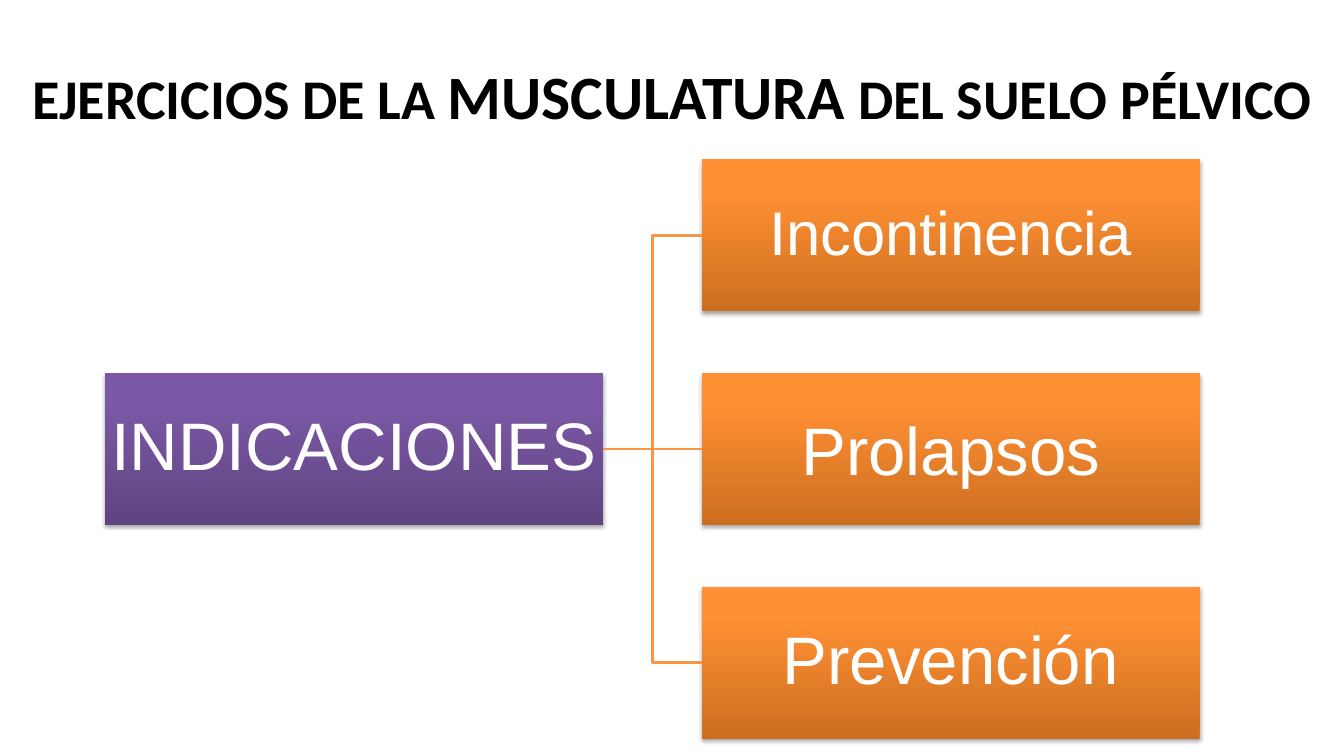
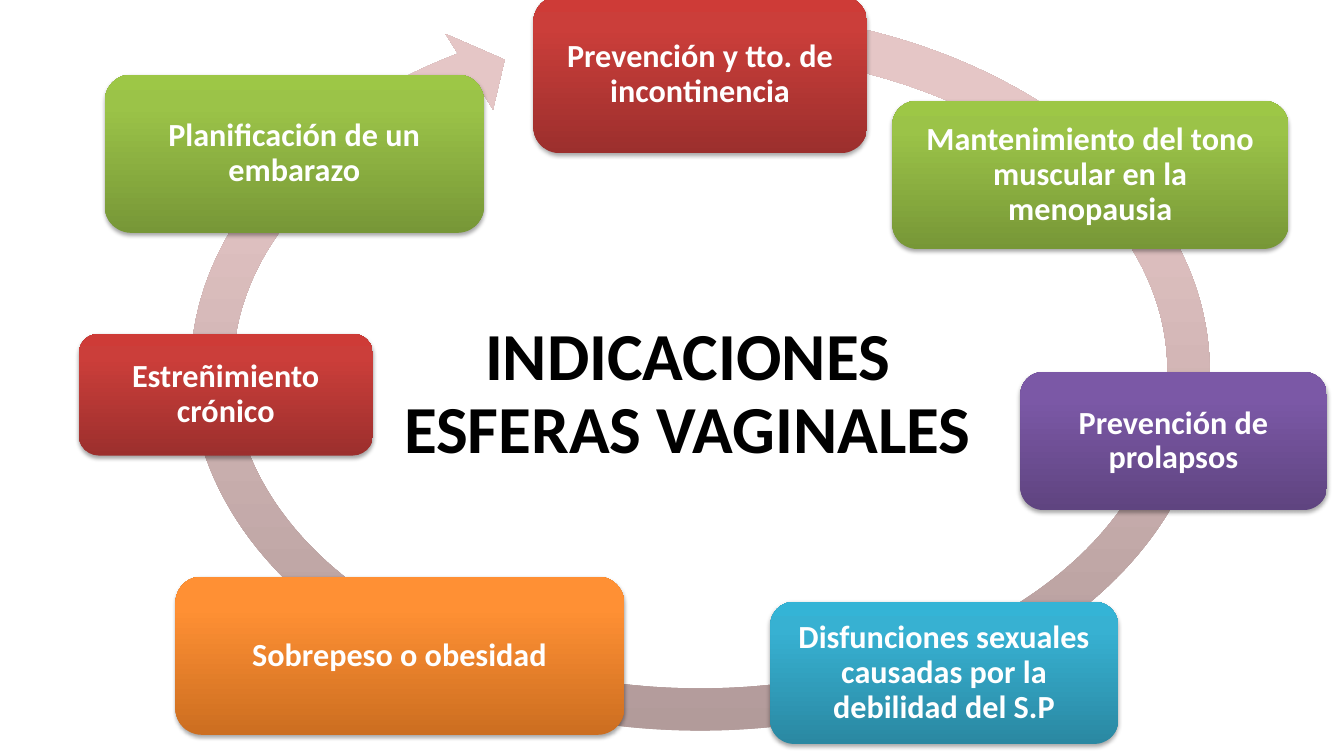
from copy import deepcopy

from lxml import etree
from pptx import Presentation
from pptx.dml.color import RGBColor
from pptx.enum import shapes, text
from pptx.oxml import ns
from pptx.util import Inches, Pt

TITLE_ONLY = 5
STOPS = (0, 0.8, 1)
PURPLE = ("5F4480", "7B58A6", "7C57A8")
ORANGE = ("CC6E20", "FF9034", "FF9136")
RED = ("9C2F2D", "CB3E3A", "CE3B37")
GREEN = ("779737", "9BC348", "9DC746")
BLUE = ("2A88A2", "37B1D2", "34B4D6")
PINK = ("B09998", "E5C6C6", "E6C7C6")
LINE, WHITE, BLACK = "F79646", "FFFFFF", "000000"

TITLE_FONT = {"name": "Calibri", "bold": True}
TREE_FONT = {"name": "Arial", "bold": False}
CYCLE_FONT = {"name": "Calibri", "bold": True}

TREE_SIZE = (4.94, 1.51)
ROOT_LEFT, BRANCH_LEFT = 1.04, 6.96
BRANCH_TOP, BRANCH_STEP = 1.58, 2.12
BRANCHES = [("Incontinencia", 44, 0.9), ("Prolapsos", 48, 1.0), ("Prevención", 48, 0.9)]

CYCLE = [
    ("Prevención y tto. de incontinencia", (5.29, -0.04, 3.31, 1.56), RED),
    ("Mantenimiento del tono muscular en la menopausia", (8.85, 1, 3.93, 1.47), GREEN),
    ("Prevención de prolapsos", (10.12, 3.69, 3.04, 1.37), PURPLE),
    ("Disfunciones sexuales causadas por la debilidad del S.P", (7.64, 5.97, 3.45, 1.41), BLUE),
    ("Sobrepeso o obesidad", (1.74, 5.72, 4.45, 1.57), ORANGE),
    ("Estreñimiento crónico", (0.78, 3.31, 2.92, 1.21), RED),
    ("Planificación de un embarazo", (1.04, 0.74, 3.76, 1.57), GREEN),
]


def rgb(code):
    return RGBColor.from_string(code)


def apply_format(target, values):
    for name, value in values.items():
        setattr(target, name, value)


def write_text(frame, spans, font, color, margin=0.1, spacing=0.9):
    """Write one centred paragraph from (text, size) spans."""
    apply_format(frame, {
        "word_wrap": True,
        "auto_size": text.MSO_AUTO_SIZE.NONE,
        "vertical_anchor": text.MSO_ANCHOR.MIDDLE,
        **{f"margin_{side}": Inches(margin) for side in ("left", "top", "right", "bottom")},
    })
    para = frame.paragraphs[0]
    apply_format(para, {"alignment": text.PP_ALIGN.CENTER, "line_spacing": spacing})
    for words, size in spans:
        span = para.add_run()
        span.text = words
        apply_format(span.font, {**font, "size": Pt(size)})
        span.font.color.rgb = rgb(color)


def add_titled_page(deck, spans, at):
    page = deck.slides.add_slide(deck.slide_layouts[TITLE_ONLY])
    title = page.shapes.title
    apply_format(title, dict(zip(("left", "top", "width", "height"), map(Inches, at))))
    write_text(title.text_frame, spans, TITLE_FONT, BLACK)
    return page


def add_gradient_shape(page, kind, at, colors):
    """Add an unlined shape shaded from the bottom up."""
    shape = page.shapes.add_shape(kind, *map(Inches, at))
    shape.shadow.inherit = False
    shape.line.fill.background()
    shape.fill.gradient()
    shape.fill.gradient_angle = 90
    stop_list = shape._element.spPr.find(".//" + ns.qn("a:gsLst"))
    stop_list.append(deepcopy(stop_list[0]))
    for stop, position, color in zip(shape.fill.gradient_stops, STOPS, colors):
        stop.position = position
        stop.color.rgb = rgb(color)
    return shape


def add_shadow(shape):
    effects = shape._element.spPr.find(ns.qn("a:effectLst"))
    shadow = etree.SubElement(effects, ns.qn("a:outerShdw"), blurRad=str(Pt(3.1)),
                              dist=str(Pt(1.8)), dir="5400000", rotWithShape="0")
    color = etree.SubElement(shadow, ns.qn("a:srgbClr"), val=BLACK)
    etree.SubElement(color, ns.qn("a:alpha"), val="35000")


def add_box(page, kind, at, colors, spans, font, **layout):
    box = add_gradient_shape(page, kind, at, colors)
    add_shadow(box)
    write_text(box.text_frame, spans, font, WHITE, **layout)
    return box


def join_boxes(page, root, branch):
    """Link the right side of root to the left side of branch."""
    level = root.top == branch.top
    kind = shapes.MSO_CONNECTOR.STRAIGHT if level else shapes.MSO_CONNECTOR.ELBOW
    link = page.shapes.add_connector(kind, 0, 0, 0, 0)
    link.begin_connect(root, 3)
    link.end_connect(branch, 1)
    link.line.width = Pt(2)
    link.line.color.rgb = rgb(LINE)
    etree.SubElement(link._element.spPr, ns.qn("a:effectLst"))


def build_tree(deck):
    page = add_titled_page(
        deck,
        [("EJERCICIOS DE LA ", 40), ("MUSCULATURA", 44), (" DEL SUELO PÉLVICO", 40)],
        (0, 0.4, 13.33, 1.18))
    kind = shapes.MSO_SHAPE.RECTANGLE
    root = add_box(page, kind, (ROOT_LEFT, BRANCH_TOP + BRANCH_STEP, *TREE_SIZE), PURPLE,
                   [("INDICACIONES", 48)], TREE_FONT, margin=0.03)
    for row, (words, size, spacing) in enumerate(BRANCHES):
        at = (BRANCH_LEFT, BRANCH_TOP + row * BRANCH_STEP, *TREE_SIZE)
        branch = add_box(page, kind, at, ORANGE, [(words, size)], TREE_FONT,
                         margin=0.03, spacing=spacing)
        join_boxes(page, root, branch)


def build_cycle(deck):
    page = add_titled_page(deck, [("INDICACIONES ESFERAS VAGINALES", 48)],
                           (3.79, 3.08, 6.06, 1.68))
    ring = add_gradient_shape(page, shapes.MSO_SHAPE.CIRCULAR_ARROW,
                              (1.66, -0.13, 10.57, 7.61), PINK)
    for index, value in enumerate((0.055, 3.307, 139.388, 172.876, 0.058)):
        ring.adjustments[index] = value
    for words, at, colors in CYCLE:
        add_box(page, shapes.MSO_SHAPE.ROUNDED_RECTANGLE, at, colors,
                [(words, 23)], CYCLE_FONT)


def main():
    deck = Presentation()
    deck.slide_width, deck.slide_height = Inches(13.33), Inches(7.5)
    build_tree(deck)
    build_cycle(deck)
    deck.save("out.pptx")


if __name__ == "__main__":
    main()
